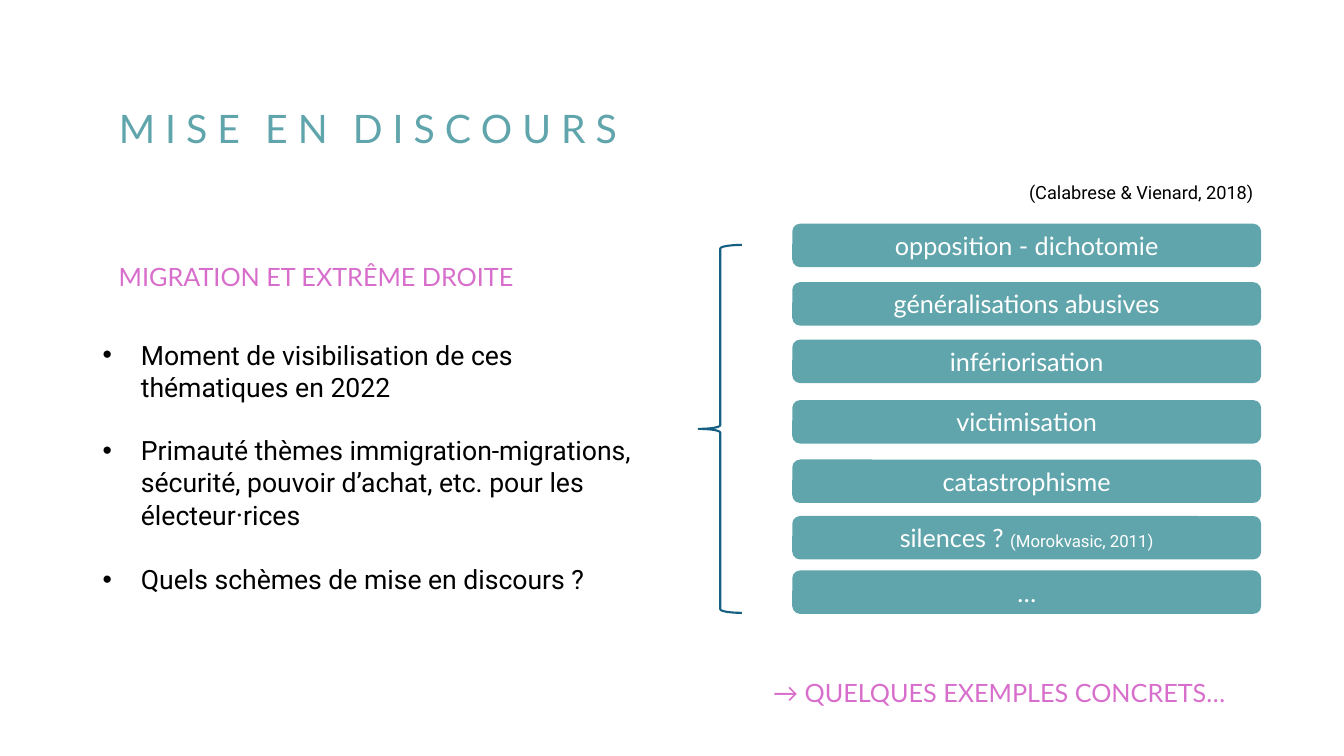
import dataclasses
import typing

import lxml.etree
import pptx
import pptx.dml.color
import pptx.enum.shapes
import pptx.enum.text
import pptx.oxml.ns
import pptx.util

SLIDE_WIDTH = pptx.util.Inches(13.333)
SLIDE_HEIGHT = pptx.util.Inches(7.5)

TEAL, PINK, NAVY = "60A5AC", "D86ECC", "156082"
BLACK, WHITE = "000000", "FFFFFF"
ANCHOR = pptx.enum.text.MSO_ANCHOR
SHAPE = pptx.enum.shapes.MSO_SHAPE


@dataclasses.dataclass(frozen=True)
class Area:
    """A place in percent of the slide's width and height."""
    left: float
    top: float
    width: float
    height: float

    def emu(self) -> tuple[int, int, int, int]:
        return (int(SLIDE_WIDTH * self.left / 100), int(SLIDE_HEIGHT * self.top / 100),
                int(SLIDE_WIDTH * self.width / 100), int(SLIDE_HEIGHT * self.height / 100))


@dataclasses.dataclass(frozen=True)
class Span:
    text: str
    size: float
    font: str
    color: str
    tracking: int = 0  # hundredths of a point


@dataclasses.dataclass(frozen=True)
class Scheme:
    top: float
    spans: tuple[Span, ...]


def rgb(color: str) -> pptx.dml.color.RGBColor:
    return pptx.dml.color.RGBColor.from_string(color)


def write(paragraph: typing.Any, spans: typing.Iterable[Span]) -> None:
    for span in spans:
        run = paragraph.add_run()
        run.text = span.text
        run.font.size = pptx.util.Pt(span.size)
        run.font.name = span.font
        run.font.color.rgb = rgb(span.color)
        if span.tracking:
            run.font._element.set("spc", str(span.tracking))


def add_text(slide: typing.Any, area: Area, *spans: Span,
             anchor: typing.Any = ANCHOR.TOP, line_spacing: float = 1.0) -> typing.Any:
    frame = slide.shapes.add_textbox(*area.emu()).text_frame
    frame.word_wrap = True
    frame.vertical_anchor = anchor
    frame.paragraphs[0].line_spacing = line_spacing
    write(frame.paragraphs[0], spans)
    return frame


def add_outline(slide: typing.Any, preset: typing.Any, area: Area, line: str) -> typing.Any:
    shape = slide.shapes.add_shape(preset, *area.emu())
    shape.shadow.inherit = False
    shape.fill.background()
    shape.line.color.rgb = rgb(line)
    shape.line.width = pptx.util.Pt(1.5)
    return shape


def add_scheme(slide: typing.Any, scheme: Scheme) -> None:
    box = add_outline(slide, SHAPE.ROUNDED_RECTANGLE, Area(59.03, scheme.top, 34.73, 5.47), TEAL)
    box.fill.solid()
    box.fill.fore_color.rgb = rgb(TEAL)
    box.text_frame.vertical_anchor = ANCHOR.MIDDLE
    paragraph = box.text_frame.paragraphs[0]
    paragraph.alignment = pptx.enum.text.PP_ALIGN.CENTER
    write(paragraph, scheme.spans)


def add_bullet(paragraph: typing.Any) -> None:
    properties = paragraph._p.get_or_add_pPr()
    indent = int(pptx.util.Inches(0.38))
    properties.set("marL", str(indent))
    properties.set("indent", str(-indent))
    font = lxml.etree.SubElement(properties, pptx.oxml.ns.qn("a:buFont"))
    font.set("typeface", "Arial")
    mark = lxml.etree.SubElement(properties, pptx.oxml.ns.qn("a:buChar"))
    mark.set("char", "•")


def label(text: str) -> Span:
    return Span(text, 18, "Lato", WHITE)


def body(text: str, size: float = 19) -> Span:
    return Span(text, size, "Roboto", BLACK)


def spaced_title(words: typing.Sequence[str]) -> list[Span]:
    """Letters set apart by one space, words by a widened one."""
    spans = []
    for number, word in enumerate(words):
        if number:
            spans.append(Span(" ", 28, "Lato", TEAL, tracking=1080))
        spans.append(Span(" ".join(word), 28, "Lato", TEAL))
    return spans


SCHEMES = (
    Scheme(29.73, (label("opposition - dichotomie"),)),
    Scheme(37.47, (label("généralisations abusives"),)),
    Scheme(45.07, (label("infériorisation"),)),
    Scheme(53.07, (label("victimisation"),)),
    Scheme(60.93, (label("catastrophisme"),)),
    Scheme(68.4, (label("silences ? "), Span("(Morokvasic, 2011)", 12, "Roboto", WHITE))),
    Scheme(75.6, (label("…"),)),
)

POINTS = (
    (body("Moment de visibilisation de ces thématiques en 2022"),),
    (body("Primauté thèmes immigration-migrations, sécurité, pouvoir d’achat, etc. "
          "pour les électeur"), body("·", 20), body("rices")),
    (body("Quels schèmes de mise en discours ?"),),
)

HEADINGS = (
    (Area(8.1, 33.87, 48.15, 5.33), "MIGRATION ET EXTRÊME DROITE"),
    (Area(56.78, 88.93, 48.15, 5.33), "→ QUELQUES EXEMPLES CONCRETS…"),
)


def main() -> None:
    deck = pptx.Presentation()
    deck.slide_width, deck.slide_height = SLIDE_WIDTH, SLIDE_HEIGHT
    slide = deck.slides.add_slide(deck.slide_layouts[6])

    # Title
    add_text(slide, Area(8.1, 7.6, 86.25, 19.33), *spaced_title(("MISE", "EN", "DISCOURS")),
             anchor=ANCHOR.MIDDLE, line_spacing=0.9)

    # Discourse schemes with their source and brace
    for scheme in SCHEMES:
        add_scheme(slide, scheme)
    add_text(slide, Area(75.83, 23.6, 22.2, 5.47),
             Span("(Calabrese & Vienard, 2018)", 13, "Roboto", BLACK), line_spacing=0.9)
    add_outline(slide, SHAPE.LEFT_BRACE, Area(51.98, 32.4, 3.23, 48.67), NAVY)

    # Bulleted points, resting on the bottom of their box
    points = add_text(slide, Area(6.9, 26.67, 42.23, 52.67), *POINTS[0], anchor=ANCHOR.BOTTOM)
    add_bullet(points.paragraphs[0])
    for spans in POINTS[1:]:
        paragraph = points.add_paragraph()
        paragraph.space_before = pptx.util.Pt(22.5)
        add_bullet(paragraph)
        write(paragraph, spans)

    # Pink headings
    for area, text in HEADINGS:
        add_text(slide, area, Span(text, 18, "Lato", PINK))

    deck.save("out.pptx")


if __name__ == "__main__":
    main()
